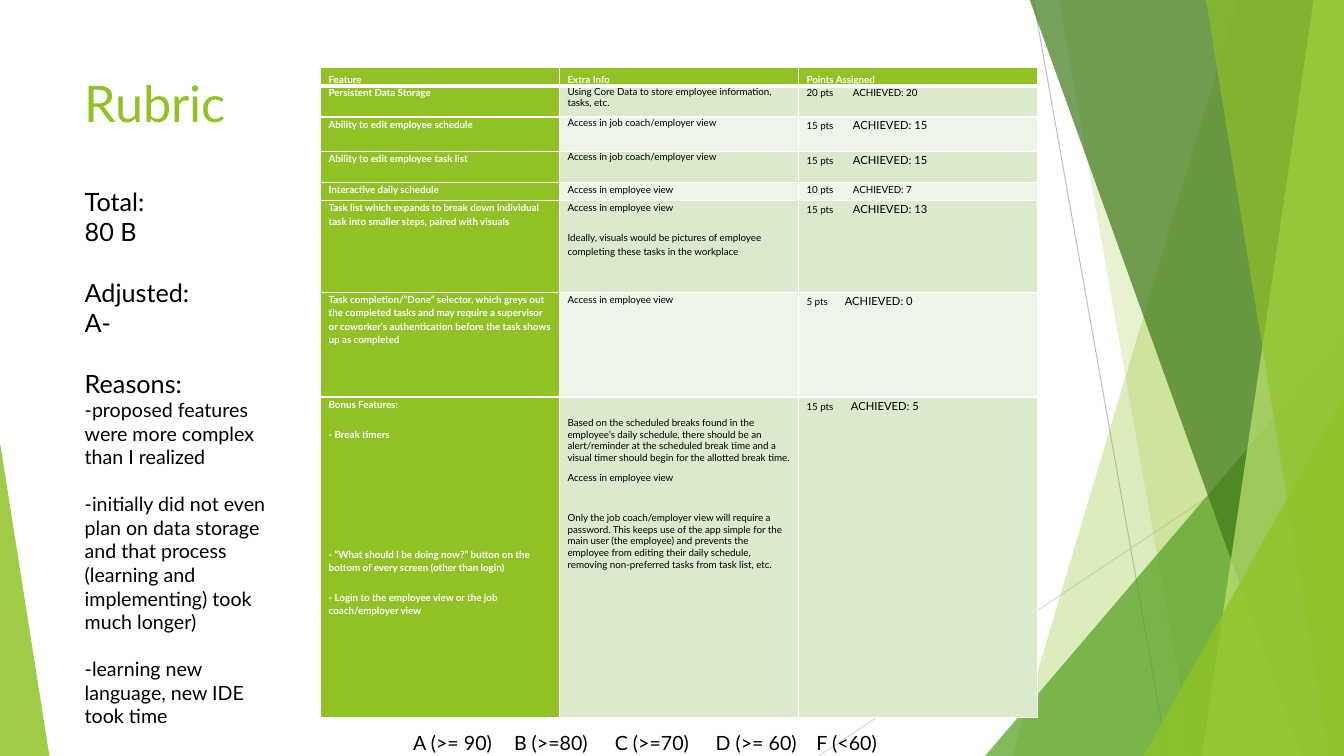
from dataclasses import dataclass

from pptx import Presentation
from pptx.dml.color import RGBColor
from pptx.enum.shapes import MSO_CONNECTOR, MSO_SHAPE
from pptx.enum.text import MSO_ANCHOR, MSO_AUTO_SIZE, PP_ALIGN
from pptx.oxml.ns import qn
from pptx.util import Inches, Pt
from lxml.etree import SubElement

FONT = "Lato"
GREEN, WHITE, BLACK = "90C226", "FFFFFF", "000000"
BANDS = ("DBE9CD", "EEF4E8")
TOP, BOTTOM, RIGHT = -0.01, 7.5, 13.33


@dataclass
class Ray:
    start: tuple[float, float]
    end: tuple[float, float]
    color: str


@dataclass
class Facet:
    top_left: float
    bottom_left: float
    color: str
    alpha: int


@dataclass
class Triangle:
    left: float
    top: float
    width: float
    apex: float
    color: str
    alpha: int


@dataclass
class Para:
    text: str
    size: float = 7
    before: float = 6


@dataclass
class Criterion:
    height: float
    feature: list[Para]
    info: list[Para]
    points: str
    achieved: str
    size: float = 8
    tab: float = 0.46
    tight: bool = False
    info_top: float = 0


RAYS = [
    Ray((10.25, 0), (11.58, 7.5), "BFBFBF"),
    Ray((13.33, 4.03), (8.12, 7.5), "D9D9D9"),
]
DECOR = [
    Facet(12.28, 10.04, GREEN, 30),
    Facet(10.5, 11.83, GREEN, 20),
    Triangle(9.77, 3.33, 3.56, 1, "54A021", 72),
    Facet(10.21, 12.91, "3F7819", 70),
    Facet(13.03, 11.92, "C0E474", 70),
    Facet(11.96, 13.18, GREEN, 65),
    Triangle(11.34, 3.93, 1.99, 1, GREEN, 80),
    Triangle(0, 4.39, 0.49, 0, GREEN, 85),
]
EMPLOYEE_VIEW = Para("Access in employee view")
COACH_VIEW = Para("Access in job coach/employer view")
HEADERS = ["Feature", "Extra Info", "Points Assigned"]
CRITERIA = [
    Criterion(0.31, [Para("Persistent Data Storage")],
              [Para("Using Core Data to store employee information, tasks, etc.")],
              "20 pts", "ACHIEVED: 20", size=7, tight=True),
    Criterion(0.34, [Para("Ability to edit employee schedule")], [COACH_VIEW],
              "15 pts", "ACHIEVED: 15", tight=True),
    Criterion(0.31, [Para("Ability to edit employee task list")], [COACH_VIEW],
              "15 pts", "ACHIEVED: 15", tight=True),
    Criterion(0.18, [Para("Interactive daily schedule")], [EMPLOYEE_VIEW],
              "10 pts", "ACHIEVED: 7", size=7),
    Criterion(0.91, [Para("Task list which expands to break down individual task into "
                          "smaller steps, paired with visuals")],
              [EMPLOYEE_VIEW, Para("Ideally, visuals would be pictures of employee "
                                   "completing these tasks in the workplace")],
              "15 pts", "ACHIEVED: 13"),
    Criterion(1.04, [Para("Task completion/”Done” selector, which greys out the completed "
                          "tasks and may require a supervisor or coworker’s authentication "
                          "before the task shows up as completed")],
              [EMPLOYEE_VIEW], "5 pts", "ACHIEVED: 0", tab=0.38),
    Criterion(3.18, [Para("Bonus Features:"), Para("- Break timers"),
                     Para("- “What should I be doing now?” button on the bottom of every "
                          "screen (other than login)", before=70),
                     Para("- Login to the employee view or the job coach/employer view")],
              [Para("Based on the scheduled breaks found in the employee’s daily schedule, "
                    "there should be an alert/reminder at the scheduled break time and a "
                    "visual timer should begin for the allotted break time."),
               EMPLOYEE_VIEW,
               Para("Only the job coach/employer view will require a password. This keeps use "
                    "of the app simple for the main user (the employee) and prevents the "
                    "employee from editing their daily schedule, removing non-preferred tasks "
                    "from task list, etc.", before=20.4)],
              "15 pts", "ACHIEVED: 5", tab=0.44, tight=True, info_top=0.2),
]
SUMMARY = [
    Para("Total:", 18, 0), Para("80 B", 18, 0),
    Para("Adjusted:", 18, 21.6), Para("A-", 18, 0),
    Para("Reasons:", 18, 21.6),
    Para("-proposed features were more complex than I realized", 14, 0),
    Para("-initially did not even plan on data storage and that process (learning and "
         "implementing) took much longer)", 14, 16.8),
    Para("-learning new language, new IDE took time", 14, 16.8),
]
GRADES = "A (>= 90)\tB (>=80)\tC (>=70)\tD (>= 60)\tF (<60)"


def rgb(color: str) -> RGBColor:
    return RGBColor.from_string(color)


def add_run(p, text: str, size: float, color: str = BLACK, bold: bool = False) -> None:
    r = p.add_run()
    r.text = text
    r.font.name, r.font.size, r.font.bold = FONT, Pt(size), bold
    r.font.color.rgb = rgb(color)


def add_tabs(p, stops: list[float]) -> None:
    tabs = SubElement(p._p.get_or_add_pPr(), qn("a:tabLst"))
    for stop in stops:
        SubElement(tabs, qn("a:tab"), pos=str(Inches(stop)), algn="l")


def write(tf, paras: list[Para], color: str = BLACK, bold: bool = False,
          spacing: float | None = None, after: float = 0) -> None:
    for i, para in enumerate(paras):
        p = tf.add_paragraph() if i else tf.paragraphs[0]
        p.alignment = PP_ALIGN.LEFT
        p.space_before, p.space_after = Pt(para.before), Pt(after)
        p.line_spacing = spacing
        add_run(p, para.text, para.size, color, bold)


def place(sp, left: float, top: float, width: float, height: float):
    sp.left, sp.top, sp.width, sp.height = map(Inches, (left, top, width, height))
    tf = sp.text_frame
    tf.word_wrap = True
    tf.auto_size = MSO_AUTO_SIZE.NONE
    tf.vertical_anchor = MSO_ANCHOR.TOP
    return tf


def draw_ray(s, ray: Ray) -> None:
    line = s.shapes.add_connector(MSO_CONNECTOR.STRAIGHT, *map(Inches, ray.start + ray.end))
    line.line.color.rgb = rgb(ray.color)
    line.line.width = Pt(0.75)
    SubElement(line._element.spPr, qn("a:effectLst"))


def draw_decor(s, item: Facet | Triangle) -> None:
    if isinstance(item, Facet):
        corners = [(RIGHT, TOP), (RIGHT, BOTTOM), (item.bottom_left, BOTTOM)]
        builder = s.shapes.build_freeform(Inches(item.top_left), Inches(TOP))
        builder.add_line_segments([(Inches(x), Inches(y)) for x, y in corners])
        sp = builder.convert_to_shape()
    else:
        sp = s.shapes.add_shape(MSO_SHAPE.ISOSCELES_TRIANGLE, Inches(item.left), Inches(item.top),
                                Inches(item.width), Inches(BOTTOM - item.top))
        sp.adjustments[0] = item.apex
    sp.shadow.inherit = False
    sp.line.fill.background()
    sp.fill.solid()
    sp.fill.fore_color.rgb = rgb(item.color)
    clr = sp._element.spPr.find(qn("a:solidFill"))[0]
    SubElement(clr, qn("a:alpha"), val=str(item.alpha * 1000))


def format_cell(cell, fill: str, top: float = 1, bottom: float = 1) -> None:
    cell.margin_left = cell.margin_right = Inches(0.08)
    cell.margin_top = cell.margin_bottom = 0
    tcPr = cell._tc.get_or_add_tcPr()
    for side, width in (("L", 1), ("R", 1), ("T", top), ("B", bottom)):
        ln = SubElement(tcPr, qn(f"a:ln{side}"), w=str(Pt(width)))
        SubElement(SubElement(ln, qn("a:solidFill")), qn("a:srgbClr"), val=WHITE)
    cell.fill.solid()
    cell.fill.fore_color.rgb = rgb(fill)


def draw_rubric(s) -> None:
    heights = [0.18] + [c.height for c in CRITERIA]
    table = s.shapes.add_table(len(heights), 3, Inches(3.18), Inches(0.67),
                               Inches(3 * 2.37), Inches(sum(heights))).table
    table.horz_banding = False
    for column in table.columns:
        column.width = Inches(2.37)
    for row, height in zip(table.rows, heights):
        row.height = Inches(height)
    for cell, header in zip(table.rows[0].cells, HEADERS):
        format_cell(cell, GREEN, bottom=3)
        cell.vertical_anchor = MSO_ANCHOR.BOTTOM
        write(cell.text_frame, [Para(header)], WHITE, True, 1.15, 6)
    for i, c in enumerate(CRITERIA):
        feature, info, points = table.rows[i + 1].cells
        band = BANDS[i % 2]
        for cell, fill in ((feature, GREEN), (info, band), (points, band)):
            format_cell(cell, fill, top=1 if i else 3)
        info.margin_top = Inches(c.info_top)
        write(feature.text_frame, c.feature, WHITE, True, 1.15, 6)
        write(info.text_frame, c.info, spacing=None if c.tight else 1.15,
              after=0 if c.tight else 6)
        write(points.text_frame, [Para(c.points + "\t")], spacing=1.15, after=6)
        p = points.text_frame.paragraphs[0]
        add_run(p, c.achieved, c.size)
        add_tabs(p, [c.tab])


def main() -> None:
    prs = Presentation()
    prs.slide_width, prs.slide_height = Inches(13.33), Inches(7.5)
    s = prs.slides.add_slide(prs.slide_layouts[1])
    for ray in RAYS:
        draw_ray(s, ray)
    for item in DECOR:
        draw_decor(s, item)
    write(place(s.shapes.title, 0.74, 0.67, 9.4, 1.44), [Para("Rubric", 36, 0)], GREEN)
    draw_rubric(s)
    grades = place(s.shapes.add_textbox(0, 0, 0, 0), 4, 7.2, 6.96, 0.61)
    write(grades, [Para(GRADES, 14, 0)])
    add_tabs(grades.paragraphs[0], [1, 2, 3, 4])
    summary = place(s.placeholders[1], 0.74, 1.8, 2, 5.76)
    write(summary, SUMMARY)
    for p in summary.paragraphs:
        pPr = p._p.get_or_add_pPr()
        pPr.set("marL", "0")
        pPr.set("indent", "0")
        SubElement(pPr, qn("a:buNone"))
    prs.save("out.pptx")


if __name__ == "__main__":
    main()
